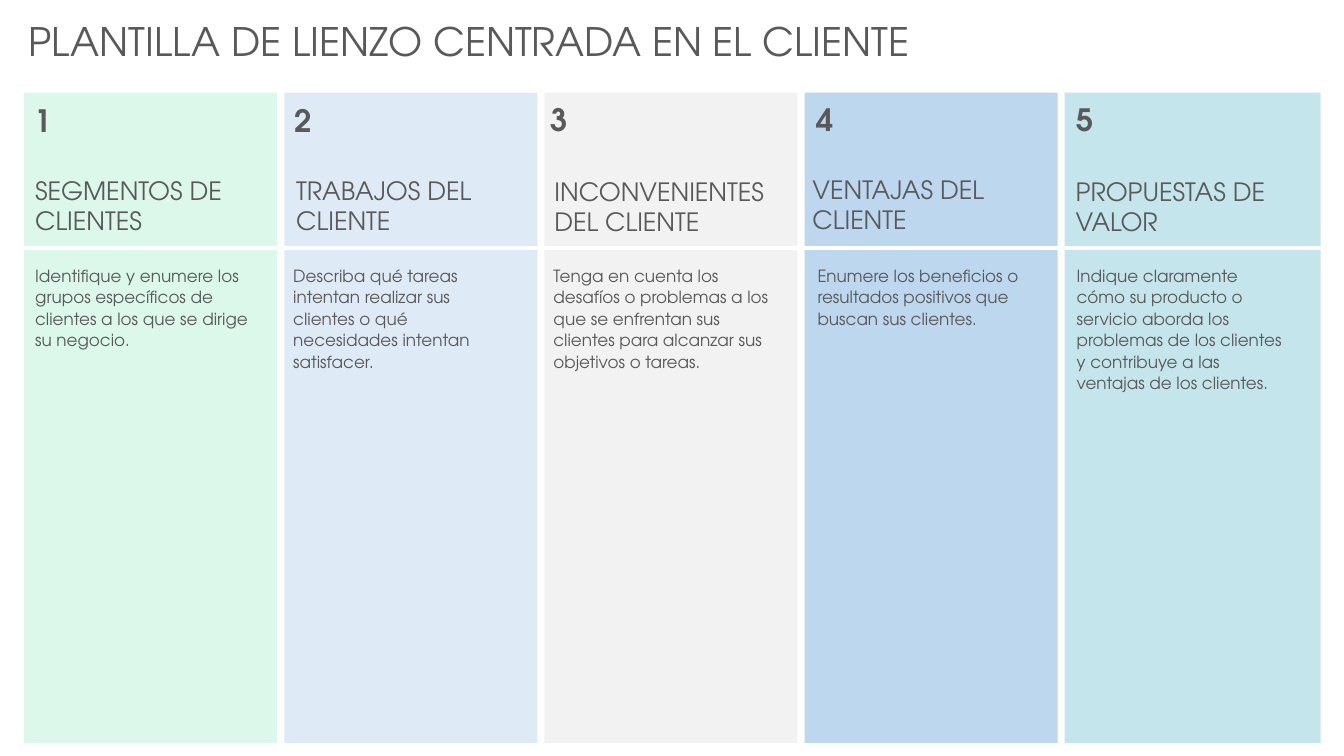
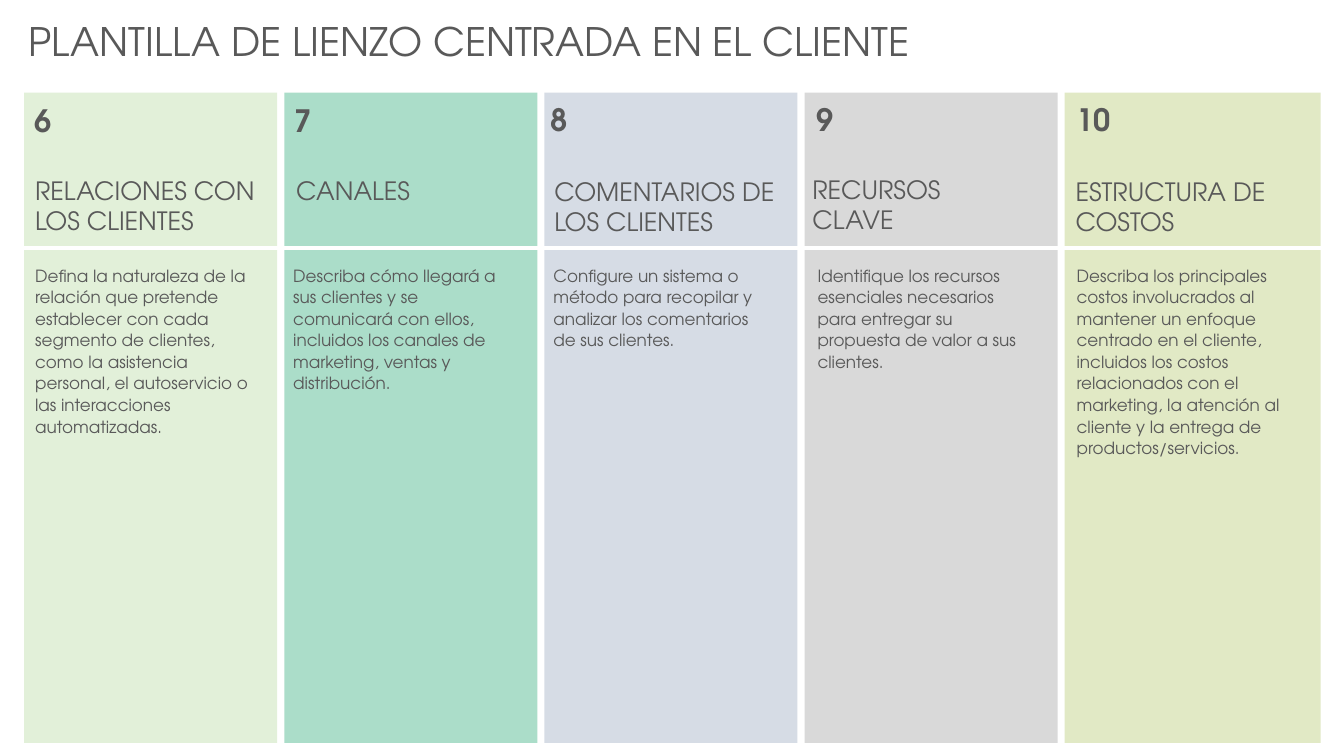
from dataclasses import dataclass

from lxml import etree
from pptx import Presentation
from pptx import util as u
from pptx.dml.color import RGBColor
from pptx.enum import shapes, text
from pptx.oxml import ns

FONT = "TeX Gyre Adventor"
INK = "595959"
WHITE = "FFFFFF"
TITLE = "PLANTILLA DE LIENZO CENTRADA EN EL CLIENTE"
TITLE_BOX = (0.18, 0.12, 12.95, 0.57)
CANVAS_LEFT, CANVAS_TOP = 0.24, 0.92
COLUMN_PITCH, COLUMN_HEIGHT = 2.58, 6.45
DIVIDER_Y, DIVIDER_RIGHT = 2.46, 13.2


@dataclass
class ColumnLayout:
    width: float
    number_x: float
    number_y: float
    heading_x: float
    heading_y: float
    body_x: float
    body_width: float


COLUMN_LAYOUTS = [
    ColumnLayout(2.51, 0, 0.01, 0.01, 0.77, 0.01, 2.38),
    ColumnLayout(2.51, 0, 0.01, 0.02, 0.77, -0.01, 2.35),
    ColumnLayout(2.51, -0.04, 0, 0, 0.78, -0.01, 2.35),
    ColumnLayout(2.51, 0.02, 0, -0.02, 0.76, 0.03, 2.38),
    ColumnLayout(2.54, 0.02, 0, 0.01, 0.78, 0.02, 2.25),
]

CANVASES = [
    [
        ("DCF8EB", "SEGMENTOS DE CLIENTES",
         "Identifique y enumere los grupos específicos de clientes a los que se dirige su negocio."),
        ("DEEBF7", "TRABAJOS DEL \nCLIENTE",
         "Describa qué tareas intentan realizar sus clientes o qué necesidades intentan satisfacer."),
        ("F2F2F2", "INCONVENIENTES DEL CLIENTE",
         "Tenga en cuenta los desafíos o problemas a los que se enfrentan sus clientes "
         "para alcanzar sus objetivos o tareas."),
        ("BDD7EE", "VENTAJAS DEL \nCLIENTE",
         "Enumere los beneficios o resultados positivos que buscan sus clientes."),
        ("C5E5ED", "PROPUESTAS DE VALOR",
         "Indique claramente cómo su producto o servicio aborda los problemas de los clientes "
         "y contribuye a las ventajas de los clientes."),
    ],
    [
        ("E2F0D9", "RELACIONES CON LOS CLIENTES",
         "Defina la naturaleza de la relación que pretende establecer con cada segmento de clientes, "
         "como la asistencia personal, el autoservicio o las interacciones automatizadas."),
        ("ABDDC9", "CANALES",
         "Describa cómo llegará a sus clientes y se comunicará con ellos, "
         "incluidos los canales de marketing, ventas y distribución."),
        ("D6DCE5", "COMENTARIOS DE LOS CLIENTES",
         "Configure un sistema o método para recopilar y analizar los comentarios de sus clientes."),
        ("D9D9D9", "RECURSOS \nCLAVE",
         "Identifique los recursos esenciales necesarios para entregar su propuesta de valor a sus clientes."),
        ("E1E9C5", "ESTRUCTURA DE \nCOSTOS",
         "Describa los principales costos involucrados al mantener un enfoque centrado en el cliente, "
         "incluidos los costos relacionados con el marketing, la atención al cliente "
         "y la entrega de productos/servicios."),
    ],
]


def color(value):
    return RGBColor.from_string(value)


def inches(*lengths):
    return [u.Inches(round(length, 2)) for length in lengths]


def write(shape, content, size, bold=False, line_spacing=1.0, space_after=0, grow=False):
    frame = shape.text_frame
    frame.word_wrap = True
    frame.vertical_anchor = text.MSO_ANCHOR.TOP
    frame.auto_size = text.MSO_AUTO_SIZE.SHAPE_TO_FIT_TEXT if grow else text.MSO_AUTO_SIZE.NONE
    paragraph = frame.paragraphs[0]
    paragraph.alignment = text.PP_ALIGN.LEFT
    paragraph.line_spacing = line_spacing
    paragraph.space_after = u.Pt(space_after)
    for index, line in enumerate(content.split("\n")):
        if index:
            paragraph.add_line_break()
        run = paragraph.add_run()
        run.text = line
        run.font.name = FONT
        run.font.size = u.Pt(size)
        run.font.bold = bold
        run.font.color.rgb = color(INK)


def add_text(slide, box, content, **formatting):
    write(slide.shapes.add_textbox(*inches(*box)), content, **formatting)


def add_title(slide):
    title = slide.shapes.title
    title.left, title.top, title.width, title.height = inches(*TITLE_BOX)
    write(title, TITLE, size=28, grow=True)


def add_panel(slide, box, fill):
    panel = slide.shapes.add_shape(shapes.MSO_SHAPE.RECTANGLE, *inches(*box))
    panel.shadow.inherit = False
    panel.fill.solid()
    panel.fill.fore_color.rgb = color(fill)
    panel.line.fill.background()


def add_divider(slide):
    divider = slide.shapes.add_connector(
        shapes.MSO_CONNECTOR.STRAIGHT,
        *inches(CANVAS_LEFT, DIVIDER_Y, DIVIDER_RIGHT, DIVIDER_Y))
    divider.line.color.rgb = color(WHITE)
    divider.line.width = u.Pt(2.25)
    etree.SubElement(divider.element.spPr, ns.qn("a:effectLst"))


def add_column(slide, left, top, layout, number, content):
    fill, heading, body = content
    add_panel(slide, (left, top, layout.width, COLUMN_HEIGHT), fill)
    number_width = 0.46 if number < 10 else 0.6
    add_text(slide, (left + layout.number_x, top + layout.number_y, number_width, 0.64),
             str(number), size=22, bold=True, line_spacing=1.07, space_after=8)
    heading_height = 0.71 if " " in heading else 0.4
    add_text(slide, (left + layout.heading_x, top + layout.heading_y, 2.5, heading_height),
             heading, size=18, grow=True)
    add_text(slide, (left + layout.body_x, top + 1.65, layout.body_width, 1.57),
             body, size=12, line_spacing=1.07, space_after=8)


def add_canvas_slide(presentation, columns, first_number):
    slide = presentation.slides.add_slide(presentation.slide_layouts[5])
    add_title(slide)
    for index, (layout, content) in enumerate(zip(COLUMN_LAYOUTS, columns)):
        left = CANVAS_LEFT + index * COLUMN_PITCH
        add_column(slide, left, CANVAS_TOP, layout, first_number + index, content)
    add_divider(slide)


def main():
    presentation = Presentation()
    presentation.slide_width, presentation.slide_height = inches(13.33, 7.5)
    first_number = 1
    for columns in CANVASES:
        add_canvas_slide(presentation, columns, first_number)
        first_number += len(columns)
    presentation.save("out.pptx")


if __name__ == "__main__":
    main()
